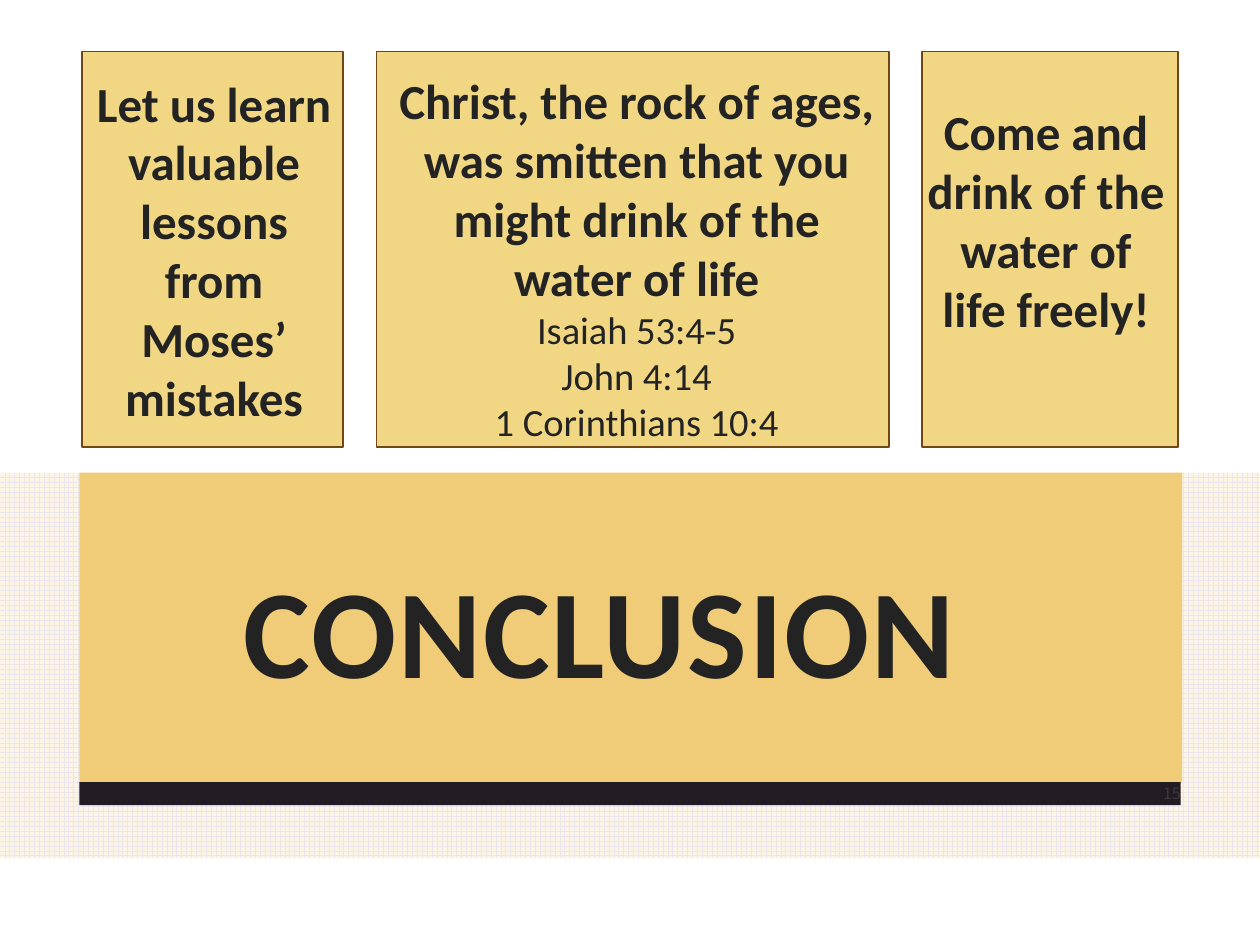
from dataclasses import dataclass

from pptx import Presentation
from pptx.dml.color import RGBColor
from pptx.enum import dml, shapes, text
from pptx.util import Cm, Pt


@dataclass(frozen=True)
class Theme:
    ink: str = "232323"
    number: str = "393939"
    card: str = "F1D784"
    card_edge: str = "6F4815"
    banner: str = "F0CC79"
    bar: str = "231B23"
    grid: str = "EBE6EB"
    paper: str = "FCF5E5"
    font: str = "Calibri"
    number_font: str = "Noto Sans CJK JP"
    title_size: int = 72
    message_size: int = 28
    verse_size: int = 22
    number_size: int = 9


THEME = Theme()
CARD_TOP, CARD_HEIGHT = 1.04, 7.98

# card left and width, text box, message, verses
CARDS = [
    (1.65, 5.26, (1.52, 1.35, 5.59, 7.44),
     "Let us learn valuable lessons from Moses’ mistakes", []),
    (7.59, 10.34, (7.77, 1.3, 10.13, 7.87),
     "Christ, the rock of ages, was smitten that you might drink of the water of life",
     ["Isaiah 53:4-5", "John 4:14", "1 Corinthians 10:4"]),
    (18.59, 5.16, (18.42, 1.93, 5.33, 6.25),
     "Come and drink of the water of life freely!", []),
]


def cm(*lengths):
    return [Cm(length) for length in lengths]


def rgb(value):
    return RGBColor.from_string(value)


def style(paragraph, size, bold=False, color=THEME.ink, font=THEME.font,
          align=text.PP_ALIGN.CENTER):
    paragraph.alignment = align
    for run in paragraph.runs:
        run.font.size = Pt(size)
        run.font.bold = bold
        run.font.name = font
        run.font.color.rgb = rgb(color)


def add_panel(slide, box, fill, edge=None):
    panel = slide.shapes.add_shape(shapes.MSO_SHAPE.RECTANGLE, *cm(*box))
    panel.shadow.inherit = False
    panel.fill.solid()
    panel.fill.fore_color.rgb = rgb(fill)
    if edge:
        panel.line.color.rgb = rgb(edge)
        panel.line.width = Pt(1)
    else:
        panel.line.fill.background()
    return panel


def add_backdrop(slide):
    fill = add_panel(slide, (0, 9.53, 25.4, 7.77), THEME.paper).fill
    fill.patterned()
    fill.pattern = dml.MSO_PATTERN.LARGE_GRID
    fill.fore_color.rgb = rgb(THEME.grid)
    fill.back_color.rgb = rgb(THEME.paper)


def add_text(slide, box, lines):
    frame = slide.shapes.add_textbox(*cm(*box)).text_frame
    frame.word_wrap = True
    frame.text = "\n".join(lines)
    return frame


def add_card(slide, left, width, text_box, message, verses):
    add_panel(slide, (left, CARD_TOP, width, CARD_HEIGHT), THEME.card, THEME.card_edge)
    frame = add_text(slide, text_box, [message, *verses])
    style(frame.paragraphs[0], THEME.message_size, bold=True)
    for verse in frame.paragraphs[1:]:
        style(verse, THEME.verse_size)


def set_title(slide, words):
    title = slide.shapes.title
    title.left, title.top, title.width, title.height = cm(1.6, 11.35, 20.98, 3.12)
    # The placeholder comes first in the tree; bring it in front of the banner.
    title.element.getparent().append(title.element)
    frame = title.text_frame
    frame.text = words
    frame.word_wrap = True
    frame.auto_size = text.MSO_AUTO_SIZE.NONE
    frame.vertical_anchor = text.MSO_ANCHOR.BOTTOM
    frame.margin_left = frame.margin_right = frame.margin_top = Cm(0.3)
    frame.margin_bottom = Cm(0.25)
    heading = frame.paragraphs[0]
    heading.line_spacing = 0.9
    style(heading, THEME.title_size, bold=True)
    heading.runs[0].font._element.set("spc", "110")


def add_slide_number(slide, number):
    frame = add_text(slide, (22.3, 15.62, 1.75, 0.76), [number])
    frame.vertical_anchor = text.MSO_ANCHOR.MIDDLE
    style(frame.paragraphs[0], THEME.number_size, color=THEME.number,
          font=THEME.number_font, align=text.PP_ALIGN.RIGHT)


def main():
    deck = Presentation()
    deck.slide_width, deck.slide_height = cm(25.4, 19.05)
    slide = deck.slides.add_slide(deck.slide_layouts.get_by_name("Title Only"))
    add_backdrop(slide)
    add_panel(slide, (1.6, 9.53, 22.23, 6.25), THEME.banner)
    add_panel(slide, (1.6, 15.77, 22.2, 0.46), THEME.bar)
    set_title(slide, "CONCLUSION")
    add_slide_number(slide, "15")
    for card in CARDS:
        add_card(slide, *card)
    deck.save("out.pptx")


if __name__ == "__main__":
    main()
